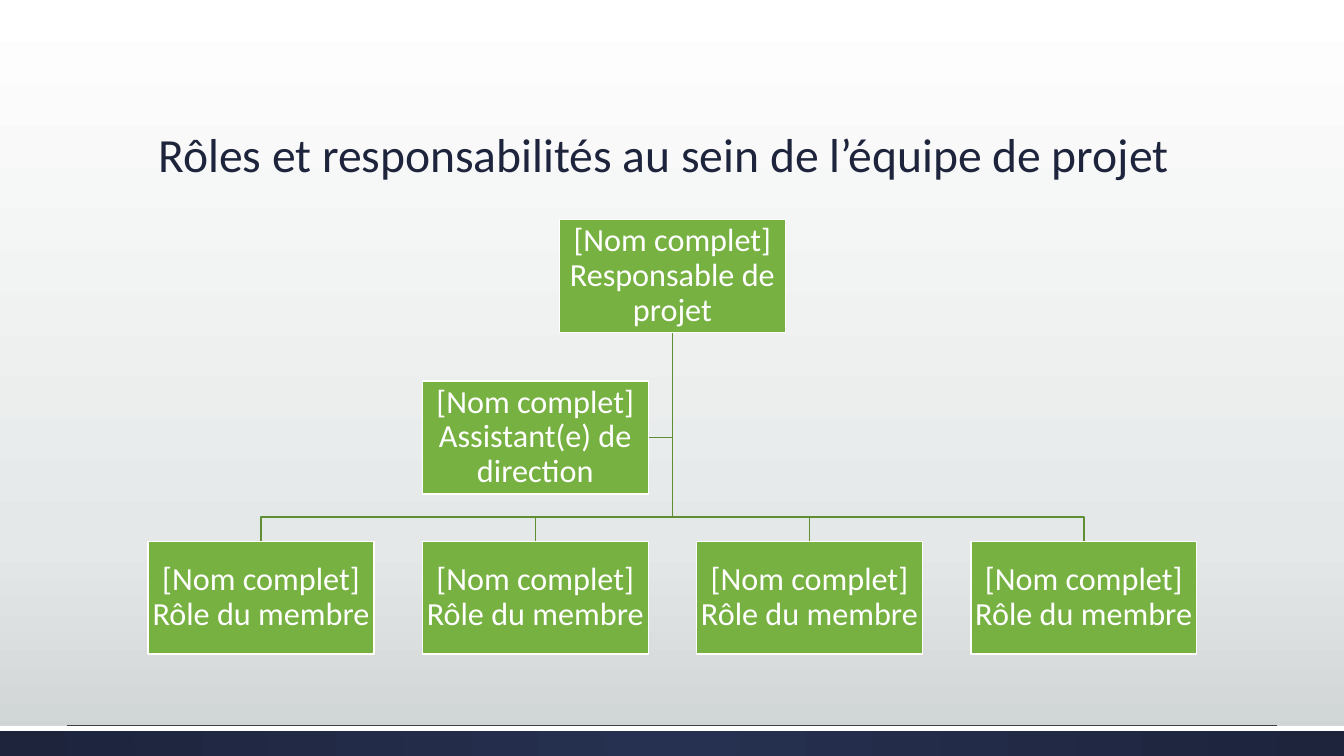
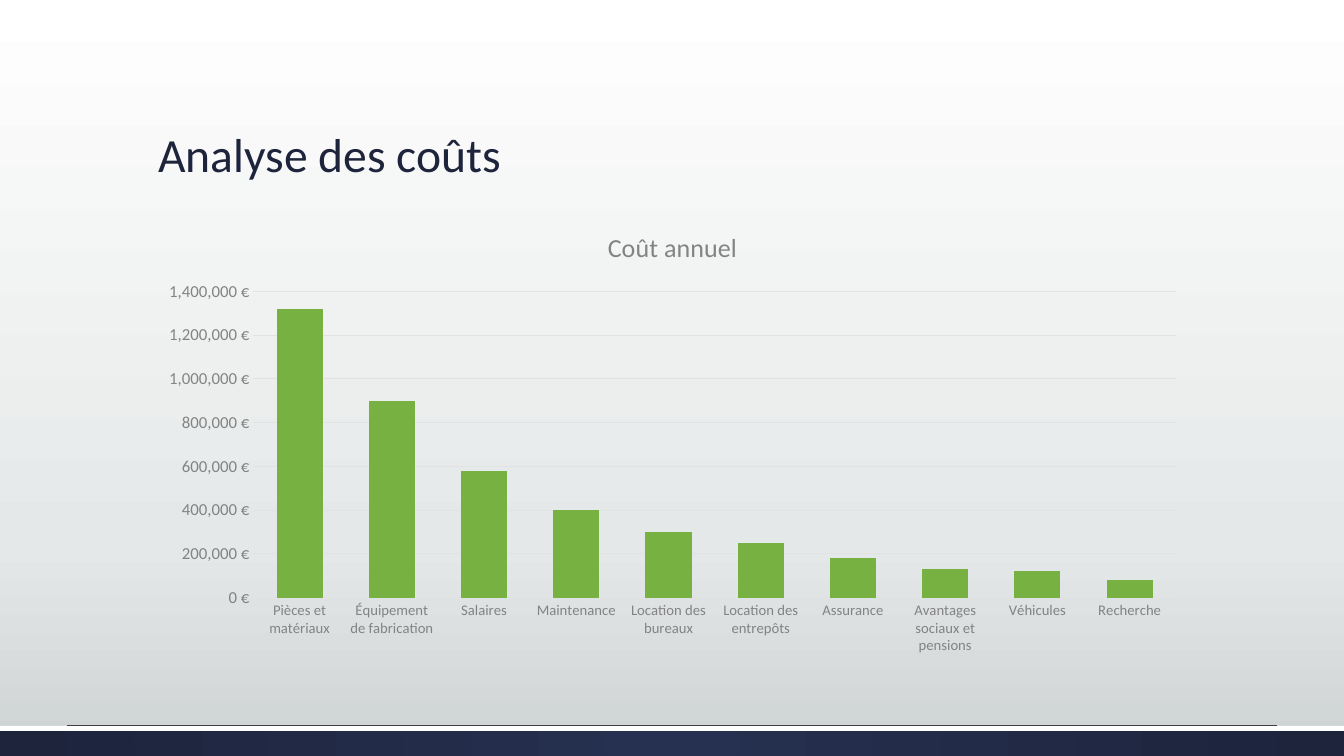
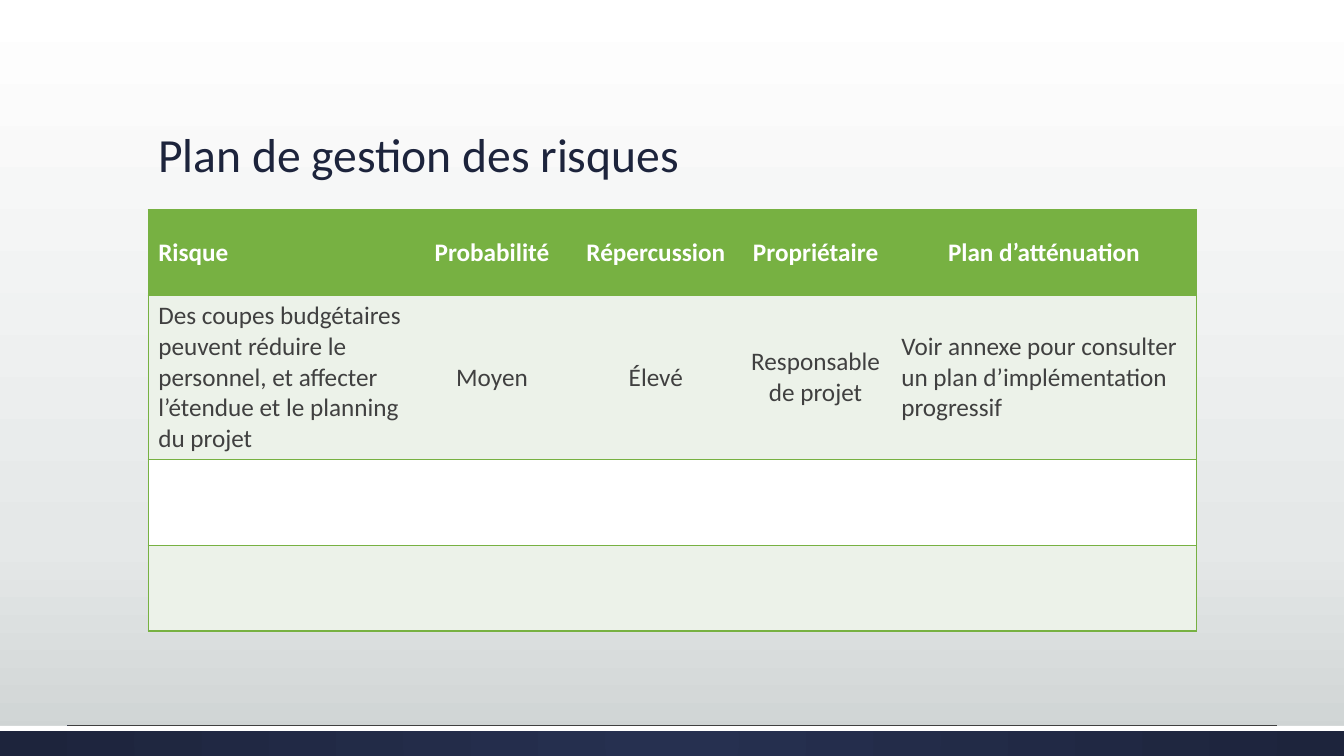
from lxml.etree import SubElement
from pptx import Presentation
from pptx.chart.data import CategoryChartData
from pptx.dml.color import RGBColor
from pptx.enum.chart import XL_CHART_TYPE, XL_TICK_MARK
from pptx.enum.shapes import MSO_CONNECTOR, MSO_SHAPE
from pptx.enum.text import MSO_ANCHOR, MSO_AUTO_SIZE, PP_ALIGN
from pptx.oxml.ns import qn
from pptx.util import Inches, Pt

COLORS = {
    "navy": "1D243C", "navy_light": "263050", "green": "77B142",
    "green_dark": "5F8E35", "green_pale": "ECF2E9", "white": "FFFFFF",
    "mist": "E5E8E8", "silver": "CDD2D2", "text": "404040",
    "gray": "838383", "grid": "E2E2E2",
}
FONT = "Calibri"
NO_TABLE_STYLE = "{2D5ABB26-0587-4C30-8999-92F81FD0307C}"
WIDTH, HEIGHT = 13.33, 7.5
LEFT, CONTENT_W, CONTENT_TOP = 1.47, 10.4, 2.08


def rgb(name):
    return RGBColor.from_string(COLORS[name])


def style_font(font, size, color, bold=False):
    font.name = FONT
    font.size = Pt(size)
    font.bold = bold
    font.color.rgb = rgb(color)


def set_gradient(fill, element, stops, radial=False):
    fill.gradient()
    grad = element.find(".//" + qn("a:gradFill"))
    for child in list(grad):
        grad.remove(child)
    gs_list = SubElement(grad, qn("a:gsLst"))
    for pos, color in stops:
        gs = SubElement(gs_list, qn("a:gs"), pos=str(pos * 1000))
        SubElement(gs, qn("a:srgbClr"), val=COLORS[color])
    if radial:
        circle = SubElement(grad, qn("a:path"), path="circle")
        SubElement(circle, qn("a:fillToRect"), {side: "50000" for side in "ltrb"})
    else:
        SubElement(grad, qn("a:lin"), ang="5400000", scaled="0")


def set_borders(cell, sides, color, width=1):
    tc_pr = cell._tc.get_or_add_tcPr()
    for i, side in enumerate(sides):
        ln = SubElement(tc_pr, qn("a:ln" + side), w=str(Pt(width)))
        solid = SubElement(ln, qn("a:solidFill"))
        SubElement(solid, qn("a:srgbClr"), val=COLORS[color])
        tc_pr.insert(i, ln)


class Deck:
    def __init__(self):
        self.prs = Presentation()
        self.prs.slide_width = Inches(WIDTH)
        self.prs.slide_height = Inches(HEIGHT)
        self.s = None
        master = self.prs.slide_master
        set_gradient(master.background.fill, master.element,
                     [(0, "white"), (72, "mist"), (100, "silver")])

    def slide(self, title):
        self.s = self.prs.slides.add_slide(self.prs.slide_layouts[5])
        band = self.rect(0, 7.2, WIDTH, 0.3, "navy")
        set_gradient(band.fill, band.element,
                     [(0, "navy_light"), (100, "navy")], radial=True)
        self.rect(0, 7.2, WIDTH, 0.05, "white")
        self.rule(0.67, 12.67, 7.19)
        self.title(title)

    def title(self, text):
        sp = self.s.shapes.title
        sp.left, sp.top = Inches(LEFT), Inches(0.51)
        sp.width, sp.height = Inches(CONTENT_W), Inches(1.35)
        tf = sp.text_frame
        tf.text = text
        tf.word_wrap = True
        tf.auto_size = MSO_AUTO_SIZE.NONE
        tf.vertical_anchor = MSO_ANCHOR.BOTTOM
        p = tf.paragraphs[0]
        p.alignment = PP_ALIGN.LEFT
        p.line_spacing = 0.9
        style_font(p.runs[0].font, 34, "navy")

    def rect(self, x, y, w, h, fill, line=None):
        sp = self.s.shapes.add_shape(MSO_SHAPE.RECTANGLE, Inches(x), Inches(y),
                                     Inches(w), Inches(h))
        sp.shadow.inherit = False
        sp.fill.solid()
        sp.fill.fore_color.rgb = rgb(fill)
        if line:
            sp.line.color.rgb = rgb(line)
            sp.line.width = Pt(1)
        else:
            sp.line.fill.background()
        return sp

    def rule(self, x1, x2, y):
        cx = self.s.shapes.add_connector(MSO_CONNECTOR.STRAIGHT, Inches(x1), Inches(y),
                                         Inches(x2), Inches(y))
        cx.line.color.rgb = rgb("text")
        cx.line.width = Pt(0.25)
        SubElement(cx.element.spPr, qn("a:effectLst"))

    def branch(self, points):
        start, *rest = [(Inches(x), Inches(y)) for x, y in points]
        builder = self.s.shapes.build_freeform(*start)
        builder.add_line_segments(rest, close=False)
        sp = builder.convert_to_shape()
        sp.shadow.inherit = False
        sp.fill.background()
        sp.line.color.rgb = rgb("green_dark")
        sp.line.width = Pt(1)

    def box(self, x, y, w, h, text):
        tf = self.rect(x, y, w, h, "green", "white").text_frame
        tf.text = text
        tf.word_wrap = True
        tf.vertical_anchor = MSO_ANCHOR.MIDDLE
        tf.margin_left = tf.margin_right = Inches(0.02)
        tf.margin_top = tf.margin_bottom = Inches(0.02)
        p = tf.paragraphs[0]
        p.alignment = PP_ALIGN.CENTER
        p.line_spacing = 0.9
        style_font(p.runs[0].font, 23, "white")

    def column_chart(self, x, y, w, h, name, costs, number_format):
        data = CategoryChartData(number_format=number_format)
        data.categories = list(costs)
        data.add_series(name, list(costs.values()))
        chart = self.s.shapes.add_chart(XL_CHART_TYPE.COLUMN_CLUSTERED, Inches(x), Inches(y),
                                        Inches(w), Inches(h), data).chart
        style_font(chart.font, 10, "text")
        chart.has_legend = False
        chart.has_title = True
        tf = chart.chart_title.text_frame
        tf.text = name
        style_font(tf.paragraphs[0].runs[0].font, 18.6, "gray")
        chart.chart_title.include_in_layout = False

        plot = chart.plots[0]
        plot.gap_width = 100
        plot.vary_by_categories = False
        series = plot.series[0]
        series.format.fill.solid()
        series.format.fill.fore_color.rgb = rgb("green")

        cat, val = chart.category_axis, chart.value_axis
        for axis, size in ((cat, 10.5), (val, 12)):
            axis.major_tick_mark = XL_TICK_MARK.NONE
            axis.minor_tick_mark = XL_TICK_MARK.NONE
            style_font(axis.tick_labels.font, size, "gray")
        val.format.line.fill.background()
        val.tick_labels.number_format = number_format
        val.tick_labels.number_format_is_linked = False
        val.has_major_gridlines = True
        for line in (cat.format.line, val.major_gridlines.format.line):
            line.color.rgb = rgb("grid")
            line.width = Pt(0.75)

    def table(self, x, y, widths, heights, rows, left_cells):
        frame = self.s.shapes.add_table(len(heights), len(widths), Inches(x), Inches(y),
                                        Inches(sum(widths)), Inches(sum(heights)))
        frame.element.find(".//" + qn("a:tableStyleId")).text = NO_TABLE_STYLE
        table = frame.table
        for column, width in zip(table.columns, widths):
            column.width = Inches(width)
        for i, (row, height) in enumerate(zip(table.rows, heights)):
            row.height = Inches(height)
            fill = "green" if i == 0 else ("green_pale" if i % 2 else "white")
            for j, cell in enumerate(row.cells):
                cell.fill.solid()
                cell.fill.fore_color.rgb = rgb(fill)
                cell.vertical_anchor = MSO_ANCHOR.MIDDLE
                sides = ["T", "B"]
                if j == len(widths) - 1:
                    sides.insert(0, "R")
                if j == 0:
                    sides.insert(0, "L")
                set_borders(cell, sides, "green")
                if i < len(rows):
                    p = cell.text_frame.paragraphs[0]
                    p.text = rows[i][j]
                    p.alignment = PP_ALIGN.LEFT if (i, j) in left_cells else PP_ALIGN.CENTER
                    style_font(p.runs[0].font, 18, "text" if i else "white", bold=i == 0)


def team_slide(deck):
    deck.slide("Rôles et responsabilités au sein de l’équipe de projet")
    w, h = 2.24, 1.12
    manager_y, assistant_y, member_y = 2.18, 3.78, 5.37
    member_count = 4
    pitch = (CONTENT_W - w) / (member_count - 1)
    member_xs = [LEFT + i * pitch for i in range(member_count)]
    assistant_x = member_xs[1]
    center = LEFT + CONTENT_W / 2
    start = (center, manager_y + h)
    bus_y = member_y - 0.24
    assistant_mid = assistant_y + h / 2

    deck.branch([start, (center, assistant_mid), (assistant_x + w, assistant_mid)])
    for x in member_xs:
        mid = x + w / 2
        deck.branch([start, (center, bus_y), (mid, bus_y), (mid, member_y)])
    deck.box(center - w / 2, manager_y, w, h, "[Nom complet] Responsable de projet")
    for x in member_xs:
        deck.box(x, member_y, w, h, "[Nom complet] Rôle du membre")
    deck.box(assistant_x, assistant_y, w, h, "[Nom complet] Assistant(e) de direction")


def cost_slide(deck):
    deck.slide("Analyse des coûts")
    costs = {
        "Pièces et matériaux": 1320000,
        "Équipement de fabrication": 900000,
        "Salaires": 580000,
        "Maintenance": 400000,
        "Location des bureaux": 300000,
        "Location des entrepôts": 250000,
        "Assurance": 180000,
        "Avantages sociaux et pensions": 130000,
        "Véhicules": 120000,
        "Recherche": 80000,
    }
    deck.column_chart(LEFT, CONTENT_TOP, CONTENT_W, 4.51, "Coût annuel", costs,
                      '#,##0\\ "€"')


def risk_slide(deck):
    deck.slide("Plan de gestion des risques")
    rows = [
        ["Risque", "Probabilité", "Répercussion", "Propriétaire", "Plan d’atténuation"],
        ["Des coupes budgétaires peuvent réduire le personnel, et affecter l’étendue "
         "et le planning du projet", "Moyen", "Élevé", "Responsable de projet",
         "Voir annexe pour consulter un plan d’implémentation progressif"],
    ]
    deck.table(LEFT, CONTENT_TOP, [2.62, 1.58, 1.67, 1.5, 3.03], [0.85, 1.63, 0.85, 0.85],
               rows, {(0, 0), (1, 0), (1, 4)})


def main():
    deck = Deck()
    team_slide(deck)
    cost_slide(deck)
    risk_slide(deck)
    deck.prs.save("out.pptx")


if __name__ == "__main__":
    main()
